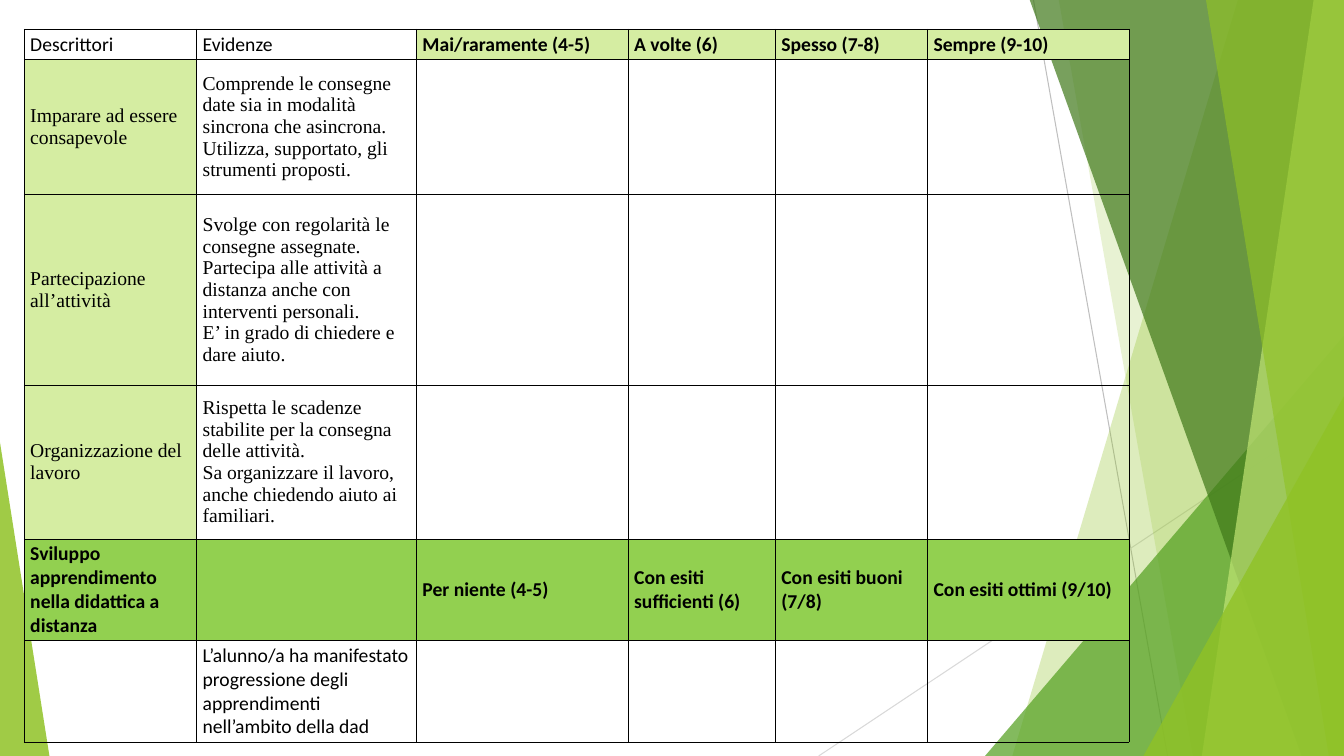
from pptx import Presentation
from pptx import util as u
from pptx.dml.color import RGBColor
from pptx.enum import shapes, text
from pptx.oxml.ns import qn
from lxml import etree

THEME = {
    "sans": "Calibri", "serif": "Times New Roman", "size": 14,
    "text": "000000", "border": "000000", "border_width": 0.48,
    "pale": "D5EDA2", "strong": "92D050",
    "green": "90C226", "leaf": "54A021", "forest": "3F7819", "lime": "C0E474",
}
WIDTH, HEIGHT = 13.33, 7.5

LINES = [((10.25, 0), (11.58, HEIGHT), "BFBFBF"), ((WIDTH, 4.03), (8.12, HEIGHT), "D9D9D9")]
FACETS = [
    ("band", 12.28, 10.04, "green", 30),
    ("band", 10.5, 11.83, "green", 20),
    ("triangle", 9.77, 3.33, 3.56, "leaf", 72, 1),
    ("band", 10.21, 12.91, "forest", 70),
    ("band", 13.03, 11.92, "lime", 70),
    ("band", 11.96, 13.18, "green", 65),
    ("triangle", 11.34, 3.93, 1.99, "green", 80, 1),
    ("triangle", 0, 4.39, 0.49, "green", 85, 0),
]

TABLE_AT = (0.24, 0.29)
COLUMNS = [1.71, 2.18, 2.1, 1.46, 1.51, 2]
ROWS = [0.3, 1.34, 1.89, 1.53, 1, 1]
CELLS = [
    ["Descrittori", "Evidenze", "Mai/raramente (4-5)", "A volte (6)", "Spesso (7-8)", "Sempre (9-10)"],
    ["Imparare ad essere consapevole",
     "Comprende le consegne date sia in modalità sincrona che asincrona.\n"
     "Utilizza, supportato, gli strumenti proposti."],
    ["Partecipazione all’attività",
     "Svolge con regolarità le consegne assegnate.\n"
     "Partecipa alle attività a distanza anche con interventi personali.\n"
     "E’ in grado di chiedere e dare aiuto."],
    ["Organizzazione del lavoro",
     "Rispetta le scadenze stabilite per la consegna delle attività.\n"
     "Sa organizzare il lavoro, anche chiedendo aiuto ai familiari."],
    ["Sviluppo apprendimento nella didattica a distanza", "", "Per niente (4-5)",
     "Con esiti sufficienti (6)", "Con esiti buoni (7/8)", "Con esiti ottimi (9/10)"],
    ["", "L’alunno/a ha manifestato progressione degli apprendimenti nell’ambito della dad"],
]
CELL_FORMAT = {
    "vertical_anchor": text.MSO_ANCHOR.MIDDLE,
    "margin_left": u.Inches(0.06), "margin_right": u.Inches(0.06),
    "margin_top": u.Inches(0.03), "margin_bottom": u.Inches(0.03),
}


def apply(target, values):
    for name, value in values.items():
        setattr(target, name, value)


def color(name):
    return RGBColor.from_string(THEME.get(name, name))


def add_line(slide, start, end, line_color):
    line = slide.shapes.add_connector(
        shapes.MSO_CONNECTOR.STRAIGHT, *(u.Inches(value) for value in start + end))
    line.line.color.rgb = color(line_color)
    line.line.width = u.Pt(0.75)
    etree.SubElement(line._element.spPr, qn("a:effectLst"))


def paint(shape, fill, opacity):
    shape.shadow.inherit = False
    shape.fill.solid()
    shape.fill.fore_color.rgb = color(fill)
    shape.line.fill.background()
    solid = shape._element.spPr.find(qn("a:solidFill"))
    etree.SubElement(solid[0], qn("a:alpha"), val=str(opacity * 1000))


def add_band(slide, top_x, bottom_x, fill, opacity):
    builder = slide.shapes.build_freeform(u.Inches(top_x), u.Inches(-0.01))
    corners = [(WIDTH, -0.01), (WIDTH, HEIGHT), (bottom_x, HEIGHT)]
    builder.add_line_segments([(u.Inches(x), u.Inches(y)) for x, y in corners], close=True)
    paint(builder.convert_to_shape(), fill, opacity)


def add_triangle(slide, left, top, width, fill, opacity, apex):
    box = (left, top, width, HEIGHT - top)
    shape = slide.shapes.add_shape(
        shapes.MSO_SHAPE.ISOSCELES_TRIANGLE, *(u.Inches(value) for value in box))
    shape.adjustments[0] = apex
    paint(shape, fill, opacity)


def add_borders(cell):
    properties = cell._tc.get_or_add_tcPr()
    for index, side in enumerate(("lnL", "lnR", "lnT", "lnB")):
        border = etree.Element(qn(f"a:{side}"), w=str(u.Pt(THEME["border_width"])))
        fill = etree.SubElement(border, qn("a:solidFill"))
        etree.SubElement(fill, qn("a:srgbClr"), val=THEME["border"])
        properties.insert(index, border)


def cell_style(row, column):
    if row == 4:
        return "strong", "sans", True
    if row == 0:
        return ("pale" if column > 1 else None), "sans", column > 1
    if row == 5:
        return None, "sans", False
    return ("pale" if column == 0 else None), "serif", False


def fill_cell(cell, content, row, column):
    fill, font, bold = cell_style(row, column)
    apply(cell, CELL_FORMAT)
    cell.text = content
    for paragraph in cell.text_frame.paragraphs:
        values = {"name": THEME[font], "size": u.Pt(THEME["size"]), "bold": bold}
        for target in [run.font for run in paragraph.runs] or [paragraph.font]:
            apply(target, values)
            target.color.rgb = color("text")
    if fill:
        cell.fill.solid()
        cell.fill.fore_color.rgb = color(fill)
    else:
        cell.fill.background()
    add_borders(cell)


def add_rubric(slide):
    box = (*TABLE_AT, sum(COLUMNS), sum(ROWS))
    table = slide.shapes.add_table(
        len(ROWS), len(COLUMNS), *(u.Inches(value) for value in box)).table
    apply(table, {"first_row": False, "horz_banding": False})
    for column, width in zip(table.columns, COLUMNS):
        column.width = u.Inches(width)
    for row, height in enumerate(ROWS):
        table.rows[row].height = u.Inches(height)
        for column in range(len(COLUMNS)):
            content = CELLS[row][column] if column < len(CELLS[row]) else ""
            fill_cell(table.cell(row, column), content, row, column)


def main():
    presentation = Presentation()
    apply(presentation, {"slide_width": u.Inches(WIDTH), "slide_height": u.Inches(HEIGHT)})
    slide = presentation.slides.add_slide(presentation.slide_layouts[6])
    for line in LINES:
        add_line(slide, *line)
    builders = {"band": add_band, "triangle": add_triangle}
    for kind, *values in FACETS:
        builders[kind](slide, *values)
    add_rubric(slide)
    presentation.save("out.pptx")


if __name__ == "__main__":
    main()
